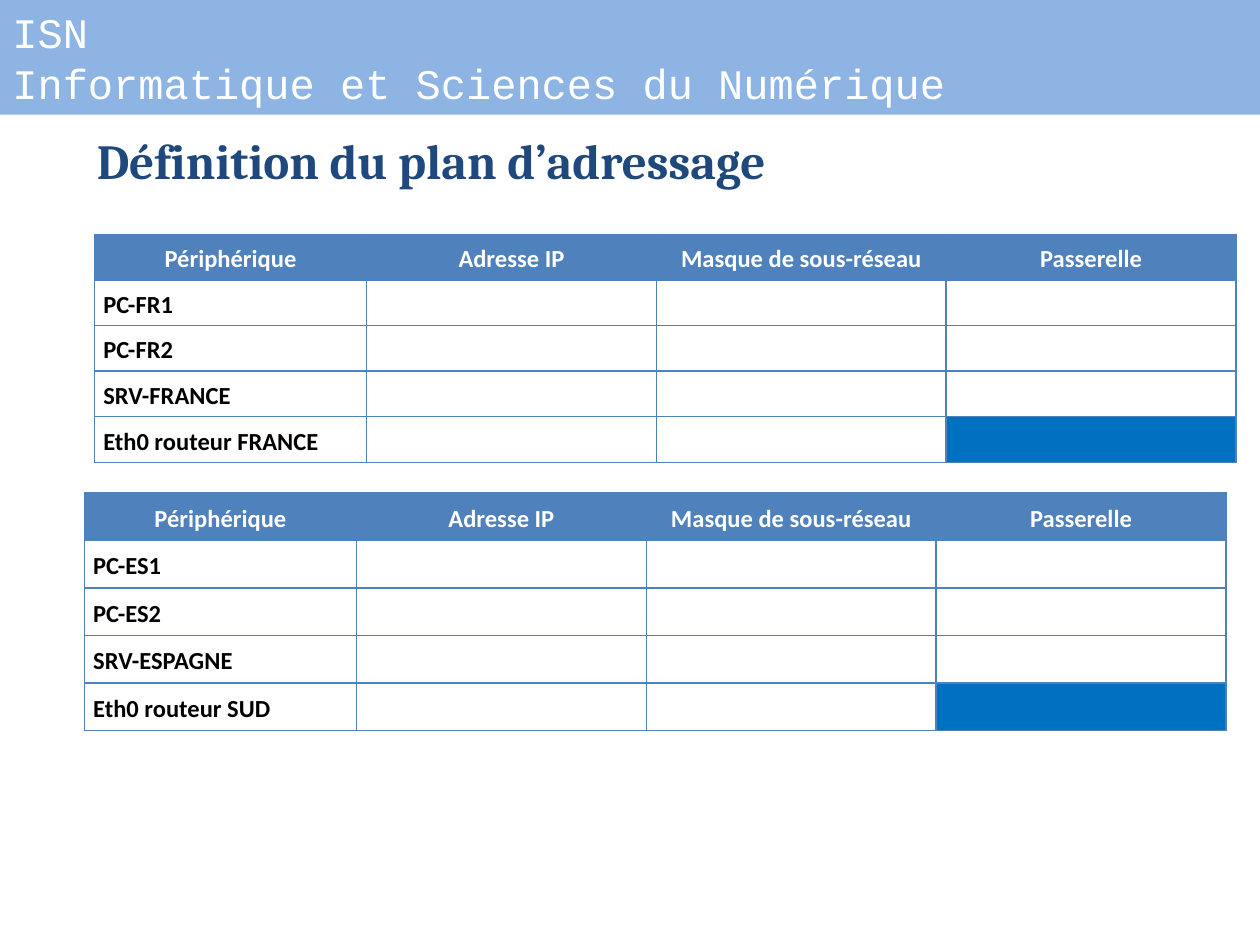
from lxml.etree import SubElement
from pptx import Presentation
from pptx.dml.color import RGBColor
from pptx.enum.shapes import MSO_SHAPE
from pptx.enum.text import MSO_ANCHOR, PP_ALIGN
from pptx.oxml.ns import qn
from pptx.util import Inches, Pt

WHITE = RGBColor(0xFF, 0xFF, 0xFF)
BLACK = RGBColor(0x00, 0x00, 0x00)
NAVY = RGBColor(0x1F, 0x49, 0x7D)
HEADER_BLUE = RGBColor(0x4F, 0x81, 0xBD)
BLOCKED_BLUE = RGBColor(0x00, 0x70, 0xC0)
BAND_BLUE = RGBColor(0x8E, 0xB4, 0xE3)

COURSE = "ISN\nInformatique et Sciences du Numérique"
TITLE = "Définition du plan d’adressage"
HEADERS = ["Périphérique", "Adresse IP", "Masque de sous-réseau", "Passerelle"]
COLUMN_WIDTHS = [2.16, 2.3, 2.3, 2.3]
NETWORKS = [
    {"left": 0.75, "top": 1.86, "row_height": 0.362,
     "devices": ["PC-FR1", "PC-FR2", "SRV-FRANCE", "Eth0 routeur FRANCE"]},
    {"left": 0.67, "top": 3.91, "row_height": 0.378,
     "devices": ["PC-ES1", "PC-ES2", "SRV-ESPAGNE", "Eth0 routeur SUD"]},
]


def format_text(text_frame, font_name, size, color, bold=False):
    for paragraph in text_frame.paragraphs:
        for run in paragraph.runs:
            run.font.name = font_name
            run.font.size = Pt(size)
            run.font.color.rgb = color
            run.font.bold = bold


def add_borders(cell, color, width):
    properties = cell._tc.get_or_add_tcPr()
    for position, side in enumerate(("lnL", "lnR", "lnT", "lnB")):
        line = SubElement(properties, qn(f"a:{side}"), w=str(Pt(width)))
        fill = SubElement(line, qn("a:solidFill"))
        SubElement(fill, qn("a:srgbClr"), val=str(color))
        properties.insert(position, line)


def fill_cell(cell, text, is_header, fill_color):
    cell.margin_left = cell.margin_right = Inches(0.07)
    cell.margin_top = cell.margin_bottom = 0
    cell.vertical_anchor = MSO_ANCHOR.MIDDLE
    if fill_color is None:
        cell.fill.background()
    else:
        cell.fill.solid()
        cell.fill.fore_color.rgb = fill_color
    add_borders(cell, HEADER_BLUE, 1)
    cell.text_frame.text = text
    paragraph = cell.text_frame.paragraphs[0]
    paragraph.line_spacing = 1.15
    paragraph.font.size = Pt(14)
    paragraph.alignment = PP_ALIGN.CENTER if is_header else PP_ALIGN.LEFT
    format_text(cell.text_frame, "Calibri", 14, WHITE if is_header else BLACK, bold=True)


def add_address_table(slide, left, top, row_height, devices):
    rows = [HEADERS] + [[device, "", "", ""] for device in devices]
    frame = slide.shapes.add_table(
        len(rows), len(HEADERS), Inches(left), Inches(top),
        Inches(sum(COLUMN_WIDTHS)), Inches(row_height * len(rows)))
    table = frame.table
    table.horz_banding = False
    for column, width in zip(table.columns, COLUMN_WIDTHS):
        column.width = Inches(width)
    for row_index, row in enumerate(rows):
        table.rows[row_index].height = Inches(row_height)
        for column_index, text in enumerate(row):
            is_header = row_index == 0
            # The router itself needs no gateway
            is_blocked = (row_index, column_index) == (len(rows) - 1, len(row) - 1)
            fill_color = HEADER_BLUE if is_header else BLOCKED_BLUE if is_blocked else None
            fill_cell(table.cell(row_index, column_index), text, is_header, fill_color)


presentation = Presentation()
presentation.slide_width = Inches(10)
presentation.slide_height = Inches(7.5)
slide = presentation.slides.add_slide(presentation.slide_layouts[6])

title = slide.shapes.add_textbox(Inches(0.67), Inches(0.99), Inches(9.13), Inches(1.04))
title.text_frame.word_wrap = True
title.text_frame.text = TITLE
format_text(title.text_frame, "Cambria", 28, NAVY, bold=True)

for network in NETWORKS:
    add_address_table(slide, **network)

band = slide.shapes.add_shape(MSO_SHAPE.RECTANGLE, 0, 0, Inches(10), Inches(0.91))
band.shadow.inherit = False
band.fill.solid()
band.fill.fore_color.rgb = BAND_BLUE
band.line.fill.background()
band.text_frame.word_wrap = True
band.text_frame.text = COURSE
for paragraph in band.text_frame.paragraphs:
    paragraph.alignment = PP_ALIGN.LEFT
format_text(band.text_frame, "Courier New", 24, WHITE)

presentation.save("out.pptx")
